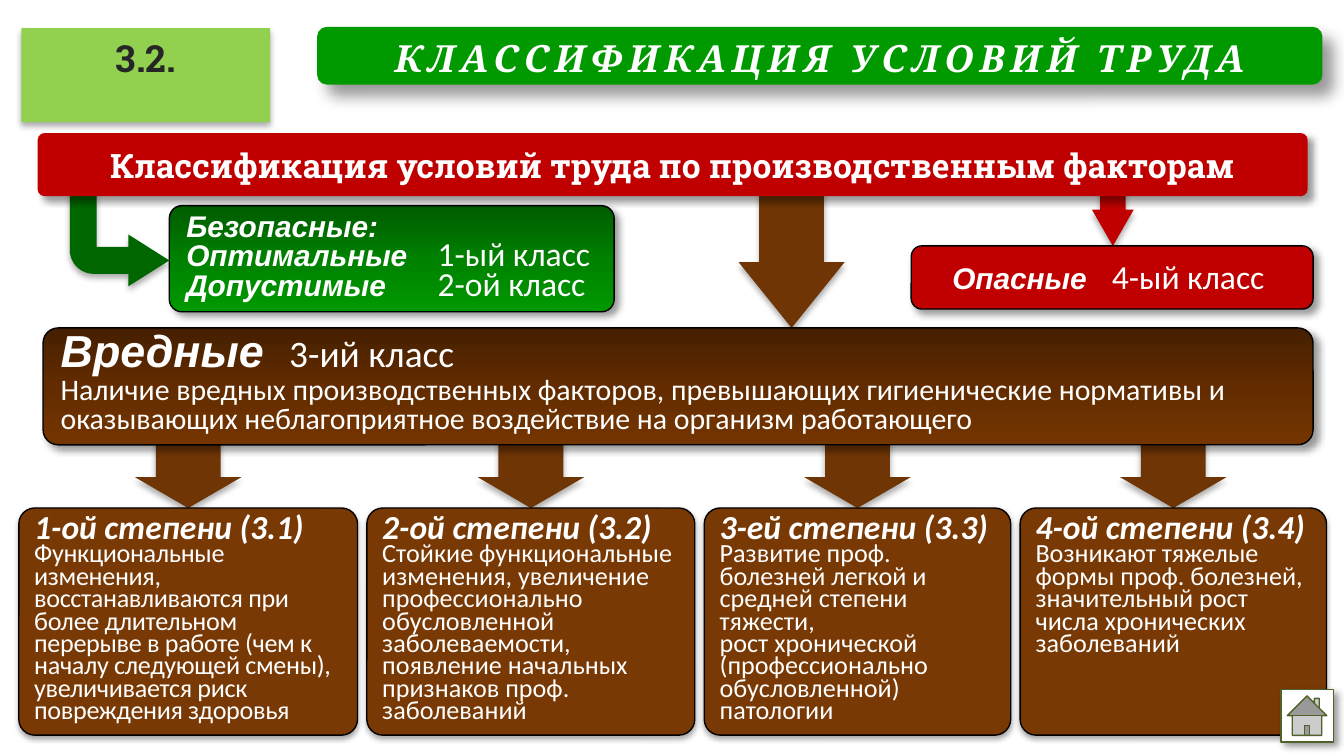
from copy import deepcopy
from dataclasses import dataclass

from lxml import etree
from pptx import Presentation
from pptx import util as u
from pptx.dml.color import RGBColor
from pptx.enum import shapes, text
from pptx.oxml import ns

KIND = shapes.MSO_SHAPE
ALIGN = text.PP_ALIGN
ANCHOR = text.MSO_ANCHOR


@dataclass(frozen=True)
class Theme:
    """Colours, fonts, type sizes and shadows of the slide."""

    white: str = "FFFFFF"
    black: str = "000000"
    dark: str = "262626"
    lime: str = "92D050"
    green: str = "009900"
    dark_green: str = "006600"
    red: str = "C00000"
    arrow_brown: str = "6F3505"
    card_brown: str = "793905"
    olive: str = "4F6228"
    safe_gradient: tuple = ("005B00", "008100", "009900")
    harmful_gradient: tuple = ("451F00", "622C00", "743500")
    body_font: str = "Calibri"
    strong_font: str = "Arial"
    slab_font: str = "Roboto Slab"
    title_font: str = "Cambria"
    tiny: int = 14
    small: int = 16
    medium: int = 18
    large: int = 20
    huge: int = 24
    low_shadow: tuple = (32, 3.5, 2.2, 90)
    card_shadow: tuple = (35, 3.1, 1.8, 90)
    box_shadow: tuple = (40, 4, 3, 45)
    title_shadow: tuple = (40, 8, 8, 45)


THEME = Theme()
STRONG = dict(font=THEME.strong_font, size=THEME.small, bold=True, italic=True)
CLASS = dict(size=THEME.medium)

CARDS = [
    (2.52, "1-ой степени (3.1)", "Функциональные изменения, восстанавливаются при более длительном "
     "перерыве в работе (чем к началу следующей смены), увеличивается риск повреждения здоровья", -0.2),
    (2.44, "2-ой степени (3.2)", "Стойкие функциональные изменения, увеличение профессионально "
     "обусловленной заболеваемости, появление начальных признаков проф. заболеваний", 0),
    (2.28, "3-ей степени (3.3)", "Развитие проф. болезней легкой и средней степени тяжести,\n"
     "рост хронической (профессионально обусловленной) патологии", 0),
    (2.28, "4-ой степени (3.4)", "Возникают тяжелые формы проф. болезней, значительный рост "
     "числа хронических заболеваний", 0),
]


def add_child(parent, tag, **attributes):
    """Append a DrawingML element to a parent."""
    return etree.SubElement(parent, ns.qn(tag), {name: str(value) for name, value in attributes.items()})


def set_shadow(shape, opacity, blur, distance, angle):
    """Give a shape an outer shadow."""
    shape.shadow.inherit = False
    effects = shape._element.spPr.find(ns.qn("a:effectLst"))
    shadow = add_child(effects, "a:outerShdw", blurRad=u.Pt(blur), dist=u.Pt(distance),
                       dir=angle * 60000, algn="ctr", rotWithShape=0)
    colour = add_child(shadow, "a:srgbClr", val=THEME.black)
    add_child(colour, "a:alpha", val=opacity * 1000)


def set_fill(shape, fill):
    """Fill a shape with one colour or a downward three-colour gradient."""
    if isinstance(fill, str):
        shape.fill.solid()
        shape.fill.fore_color.rgb = RGBColor.from_string(fill)
        return
    shape.fill.gradient()
    shape.fill.gradient_angle = 270
    stops = shape._element.spPr.find(".//" + ns.qn("a:gsLst"))
    stops.insert(1, deepcopy(stops[0]))
    for stop, colour, position in zip(shape.fill.gradient_stops, fill, (0, 0.5, 1)):
        stop.color.rgb = RGBColor.from_string(colour)
        stop.position = position


def add_shape(slide, kind, box, fill, shadow, line=None, adjustments=()):
    """Add a preset shape with its fill, outline and shadow."""
    shape = slide.shapes.add_shape(kind, *map(u.Inches, box))
    for index, value in enumerate(adjustments):
        shape.adjustments[index] = value
    set_fill(shape, fill)
    if line:
        shape.line.color.rgb = RGBColor.from_string(line)
        shape.line.width = u.Pt(0.75)
    else:
        shape.line.fill.background()
    set_shadow(shape, *shadow)
    return shape


def add_run(paragraph, content, *, size, font=THEME.body_font, colour=THEME.white,
            bold=False, italic=False, spacing=0):
    """Add formatted text to a paragraph, with line breaks at newlines."""
    for index, part in enumerate(content.split("\n")):
        if index:
            paragraph.add_line_break()
        run = paragraph.add_run()
        run.text = part
        run.font.size, run.font.name = u.Pt(size), font
        run.font.bold, run.font.italic = bold, italic
        run.font.color.rgb = RGBColor.from_string(colour)
        if spacing:
            run.font._element.set("spc", str(round(spacing * 100)))


def write(shape, paragraphs, align=ALIGN.LEFT, anchor=ANCHOR.MIDDLE,
          insets=(0.1, 0.05, 0.1, 0.05), leading=None, tab=None, wrap=True):
    """Fill a shape with paragraphs, each a list of (text, format) pairs."""
    frame = shape.text_frame
    frame.word_wrap, frame.vertical_anchor = wrap, anchor
    frame.margin_left, frame.margin_top, frame.margin_right, frame.margin_bottom = map(u.Inches, insets)
    for index, runs in enumerate(paragraphs):
        paragraph = frame.add_paragraph() if index else frame.paragraphs[0]
        paragraph.alignment = align
        if leading:
            paragraph.line_spacing = u.Pt(leading)
        if tab:
            tabs = add_child(paragraph._p.get_or_add_pPr(), "a:tabLst")
            add_child(tabs, "a:tab", pos=u.Inches(tab), algn="l")
        for content, style in runs:
            add_run(paragraph, content, **style)


def add_title(slide, content):
    """Put the title placeholder on a rounded green banner."""
    box = (2.36, 0.2, 7.48, 0.43)
    banner = add_shape(slide, KIND.ROUNDED_RECTANGLE, box, THEME.green, THEME.title_shadow)
    title = slide.shapes.title
    title.left, title.top, title.width, title.height = map(u.Inches, box)
    banner._element.addnext(title._element)
    style = dict(font=THEME.title_font, size=THEME.large, bold=True, italic=True, spacing=3)
    write(title, [[(content, style)]], ALIGN.CENTER, insets=(0.1, 0.08, 0.1, 0.05))


def add_down_arrow(slide, center, top, width, height, head, fill=THEME.arrow_brown):
    """Add a block arrow pointing down, centred on a given position."""
    box = (center - width / 2, top, width, height)
    add_shape(slide, KIND.DOWN_ARROW, box, fill, THEME.low_shadow, adjustments=(0.61, head))


def add_turn_arrow(slide):
    """Add the bent arrow that leads to the safe classes."""
    arrow = add_shape(slide, KIND.BENT_ARROW, (0.52, 1.24, 0.74, 0.89), THEME.dark_green,
                      THEME.low_shadow, adjustments=(0.27, 0.26, 0.41, 0.24))
    arrow.rotation = 180
    arrow._element.spPr.find(ns.qn("a:xfrm")).set("flipH", "1")


def add_box(slide, box, fill, radius, paragraphs, line=THEME.black, shadow=THEME.box_shadow, **layout):
    """Add a rounded box with text."""
    shape = add_shape(slide, KIND.ROUNDED_RECTANGLE, box, fill, shadow, line, (radius,))
    write(shape, paragraphs, **layout)


def add_cards(slide, left=0.14, gap=0.07):
    """Add the row of degree cards, each under its arrow."""
    for width, heading, body, spacing in CARDS:
        add_down_arrow(slide, left + width / 2, 2.99, 0.79, 0.79, 0.29)
        paragraphs = [[(heading, dict(size=THEME.medium, bold=True, italic=True))],
                      [(body, dict(size=THEME.tiny, spacing=spacing))]]
        add_box(slide, (left, 3.78, width, 1.69), THEME.card_brown, 0.07, paragraphs,
                shadow=THEME.card_shadow, anchor=ANCHOR.TOP, insets=(0.08, 0.08, 0.08, 0.04), leading=12)
        left += width + gap


def main():
    """Build the slide and save it."""
    presentation = Presentation()
    presentation.slide_width, presentation.slide_height = u.Inches(10), u.Inches(10 * 9 / 16)
    slide = presentation.slides.add_slide(presentation.slide_layouts[5])
    add_title(slide, "КЛАССИФИКАЦИЯ УСЛОВИЙ ТРУДА")
    number = add_shape(slide, KIND.RECTANGLE, (0.16, 0.21, 1.85, 0.7), THEME.lime, THEME.low_shadow)
    slab = dict(font=THEME.slab_font, bold=True)
    write(number, [[("3.2.", dict(slab, size=THEME.large, colour=THEME.dark))]],
          ALIGN.CENTER, ANCHOR.TOP, wrap=False)
    add_turn_arrow(slide)
    add_down_arrow(slide, 5.89, 1.26, 0.79, 1.18, 0.62)
    add_down_arrow(slide, 8.28, 1.24, 0.31, 0.59, 0.87, THEME.red)
    add_cards(slide)
    add_box(slide, (1.26, 1.53, 3.31, 0.79), THEME.safe_gradient, 0.12,
            [[("Безопасные:", STRONG)],
             [("Оптимальные\t", STRONG), ("1-ый класс", CLASS)],
             [("Допустимые\t", STRONG), ("2-ой класс", CLASS)]], leading=16, tab=1.87)
    add_box(slide, (0.32, 2.44, 9.45, 0.87), THEME.harmful_gradient, 0.13,
            [[("Вредные\t", dict(STRONG, size=THEME.huge)), ("3-ий класс", dict(size=THEME.large))],
             [("Наличие вредных производственных факторов, превышающих гигиенические нормативы и "
               "оказывающих неблагоприятное воздействие на организм работающего", dict(size=THEME.small))]],
            insets=(0.1, 0.12, 0.1, 0.05), leading=16, tab=1.7)
    add_box(slide, (6.78, 1.83, 2.99, 0.47), THEME.red, 0.17,
            [[("Опасные", STRONG), (" ", dict(STRONG, spacing=9)), ("4-ый класс ", CLASS)]],
            align=ALIGN.CENTER, leading=20)
    add_box(slide, (0.28, 0.99, 9.45, 0.47), THEME.red, 0.11,
            [[("Классификация условий труда по производственным факторам", dict(slab, size=THEME.medium))]],
            line=None, align=ALIGN.CENTER, leading=22)
    add_shape(slide, KIND.ACTION_BUTTON_HOME, (9.53, 5.13, 0.39, 0.39), THEME.white,
              THEME.box_shadow, THEME.olive)
    presentation.save("out.pptx")


if __name__ == "__main__":
    main()
